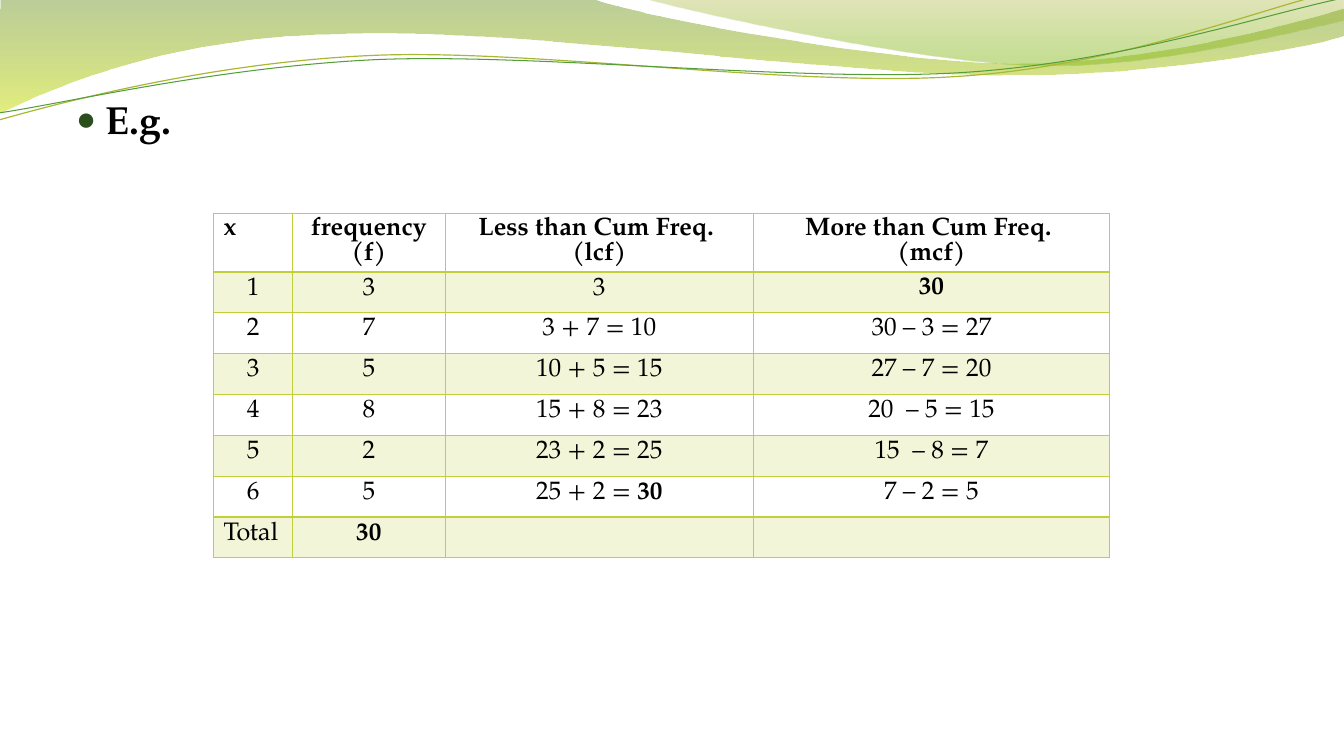
import pptx
import pptx.dml.color
import pptx.enum.text
import pptx.oxml
import pptx.oxml.ns
import pptx.util
from dataclasses import dataclass

Pt = pptx.util.Pt
qn = pptx.oxml.ns.qn

# ---- Content: asterisks enclose bold text, a line feed parts paragraphs ----
HEADING = "E.g."
ROWS = [
    ("*x*", "*frequency*\n*(f)*", "*Less than Cum Freq. *\n*(lcf)*", "*More than Cum Freq. *\n*(mcf)*"),
    ("1", "3", "3", "*30*"),
    ("2", "7", "3 + 7 = 10", "30 – 3 = 27"),
    ("3", "5", "10 + 5 = 15", "27 – 7 = 20"),
    ("4", "8", "15 + 8 = 23", "20  – 5 = 15"),
    ("5", "2", "23 + 2 = 25", "15  – 8 = 7"),
    ("6", "5", "25 + 2 = *30*", "7 – 2 = 5"),
    ("Total", "*30*", "", ""),
]
LEFT_ALIGNED = ("*x*", "Total")

# Outlines in points: two numbers draw a straight line, six a Bézier curve
BANDS = [
    {
        "outline": [(0, 0), (422.6, -0.7), (456.5, 12.2, 636.5, 45.4, 727.9, 45.4),
                    (818.6, 45.4, 919.4, 18.7, 959.8, 6.5), (960.5, 25.9),
                    (943.9, 31.7, 834.5, 54.7, 715.7, 54), (596.9, 54, 366.5, 20.2, 247, 24.5),
                    (123.8, 25.9, 43.9, 59.8, -1.4, 81.4)],
        "stops": [(0, "69921C", 45), (1, "CCE10F", 55)],
    },
    {
        "outline": [(459.4, -0.7), (488.9, 7.9, 654.5, 44.6, 738, 46.8),
                    (820.8, 49.7, 923, 23, 959.8, 15.1), (959.8, 0)],
        "stops": [(0, "9BAA1A", 30), (0.8, "81BA16", 45)],
    },
]
STRANDS = [  # drawn level, then tilted
    {
        "outline": [(-2.3, 63.1), (44.4, 52.3, 151.4, 29.2, 266, 29.6),
                    (379.8, 29.9, 567, 66.8, 682.5, 64.3), (798.5, 62.6, 901.9, 25.7, 959.4, 15.4)],
        "color": "A9B733", "width": 0.85,
    },
    {
        "outline": [(-2, 58), (43.6, 53.7, 157.2, 32.3, 271.6, 32.7),
                    (386.9, 33.8, 572.2, 63.4, 687, 61.6), (801.6, 59.8, 904.6, 30.1, 961.4, 21.2)],
        "color": "549E39", "width": 0.75,
    },
]
STRAND_TILT = 357.3


@dataclass(frozen=True)
class Theme:
    font: str = "TeX Gyre Pagella"
    text: str = "000000"
    bullet: str = "2A4F1C"
    accent: str = "C0CF3A"
    band_opacity: int = 20
    heading_size: int = 28
    table_size: int = 18
    header_spacing: float = 17.3


THEME = Theme()
TABLE_LEFT, TABLE_TOP, TABLE_HEIGHT = 152.6, 152.3, 255
COLUMN_WIDTHS = (56.4, 109, 220.2, 254.4)
ROW_HEIGHT = 29.2


def rgb(code):
    return pptx.dml.color.RGBColor.from_string(code)


def set_opacity(color_element, percent):
    alpha = color_element.makeelement(qn("a:alpha"), {"val": str(percent * 1000)})
    color_element.append(alpha)


def style_font(font, size, bold=False):
    font.name, font.size, font.bold = THEME.font, Pt(size), bold
    font.color.rgb = rgb(THEME.text)


def add_outline(page, outline, close):
    """Build a freeform through all points, then bend each six-number segment."""
    points = [(Pt(segment[i]), Pt(segment[i + 1]))
              for segment in outline for i in range(0, len(segment), 2)]
    builder = page.shapes.build_freeform(*points[0])
    builder.add_line_segments(points[1:], close=close)
    shape = builder.convert_to_shape()
    shape.shadow.inherit = False
    lines = iter(list(shape.element.iter(qn("a:lnTo"))))
    for segment in outline[1:]:
        steps = [next(lines) for _ in range(len(segment) // 2)]
        if len(steps) == 3:
            curve = steps[0].makeelement(qn("a:cubicBezTo"), {})
            steps[0].addprevious(curve)
            for step in steps:
                curve.append(step[0])
                step.getparent().remove(step)
    return shape


def add_waves(page):
    """Draw the waves and set them behind everything, on the page's layout."""
    waves = []
    for band in BANDS:
        shape = add_outline(page, band["outline"], True)
        shape.line.fill.background()
        shape.fill.gradient()
        shape.fill.gradient_angle = 270
        for stop, (position, color, _) in zip(shape.fill.gradient_stops, band["stops"]):
            stop.position = position
            stop.color.rgb = rgb(color)
        colors = list(shape.element.iter(qn("a:srgbClr")))
        for element, (_, _, opacity) in zip(colors, band["stops"]):
            set_opacity(element, opacity)
        waves.append(shape)
    for strand in STRANDS:
        shape = add_outline(page, strand["outline"], False)
        shape.rotation = STRAND_TILT
        shape.fill.background()
        shape.line.color.rgb = rgb(strand["color"])
        shape.line.width = Pt(strand["width"])
        waves.append(shape)
    backmost = page.slide_layout.shapes[0].element
    for number, wave in enumerate(waves, start=101):
        wave.element.nvSpPr.cNvPr.set("id", str(number))
        backmost.addprevious(wave.element)


def add_heading(page):
    body = page.placeholders[1]
    body.left, body.top, body.width, body.height = Pt(47.2), Pt(64.8), Pt(864), Pt(461.5)
    para = body.text_frame.paragraphs[0]
    para.text = HEADING
    para.space_before = Pt(5.6)
    properties = para._p.get_or_add_pPr()
    properties.set("marL", str(Pt(21)))
    properties.set("indent", str(-Pt(21)))
    namespace = pptx.oxml.ns.nsdecls("a")
    for xml in (f'<a:buClr {namespace}><a:srgbClr val="{THEME.bullet}"/></a:buClr>',
                f'<a:buSzPct {namespace} val="85000"/>',
                f'<a:buChar {namespace} char="●"/>'):
        properties.append(pptx.oxml.parse_xml(xml))
    style_font(para.font, THEME.heading_size, True)


def add_borders(cell, top, bottom):
    properties = cell._tc.get_or_add_tcPr()
    for side, width in (("L", 1), ("R", 1), ("T", top), ("B", bottom)):
        properties.append(pptx.oxml.parse_xml(
            f'<a:ln{side} {pptx.oxml.ns.nsdecls("a")} w="{Pt(width)}"><a:solidFill>'
            f'<a:srgbClr val="{THEME.accent}"/></a:solidFill></a:ln{side}>'))


def fill_cell(cell, text, row):
    add_borders(cell, 2 if row == 1 else 1, 2 if row == 0 else 1)
    if row % 2:
        cell.fill.solid()
        cell.fill.fore_color.rgb = rgb(THEME.accent)
        color = cell._tc.tcPr.find(f'{qn("a:solidFill")}/{qn("a:srgbClr")}')
        set_opacity(color, THEME.band_opacity)
    else:
        cell.fill.background()
    alignment = pptx.enum.text.PP_ALIGN
    for index, line in enumerate(text.split("\n")):
        frame = cell.text_frame
        para = frame.add_paragraph() if index else frame.paragraphs[0]
        para.alignment = alignment.LEFT if text in LEFT_ALIGNED else alignment.CENTER
        if row == 0:
            para.line_spacing = Pt(THEME.header_spacing)
        style_font(para.font, THEME.table_size)
        for part, words in enumerate(line.split("*")):
            if words:
                span = para.add_run()
                span.text = words
                span.font.bold = part % 2 == 1


def add_frequency_table(page):
    table = page.shapes.add_table(len(ROWS), len(COLUMN_WIDTHS), Pt(TABLE_LEFT), Pt(TABLE_TOP),
                                  Pt(sum(COLUMN_WIDTHS)), Pt(TABLE_HEIGHT)).table
    table.first_row = table.horz_banding = False
    for column, width in zip(table.columns, COLUMN_WIDTHS):
        column.width = Pt(width)
    for row, texts in enumerate(ROWS):
        table.rows[row].height = Pt(ROW_HEIGHT)
        for column, text in enumerate(texts):
            fill_cell(table.cell(row, column), text, row)


def main():
    deck = pptx.Presentation()
    deck.slide_width, deck.slide_height = Pt(960), Pt(540)
    page = deck.slides.add_slide(deck.slide_layouts[1])
    title = page.shapes.title.element
    title.getparent().remove(title)
    add_waves(page)
    add_heading(page)
    add_frequency_table(page)
    deck.save("out.pptx")


if __name__ == "__main__":
    main()
